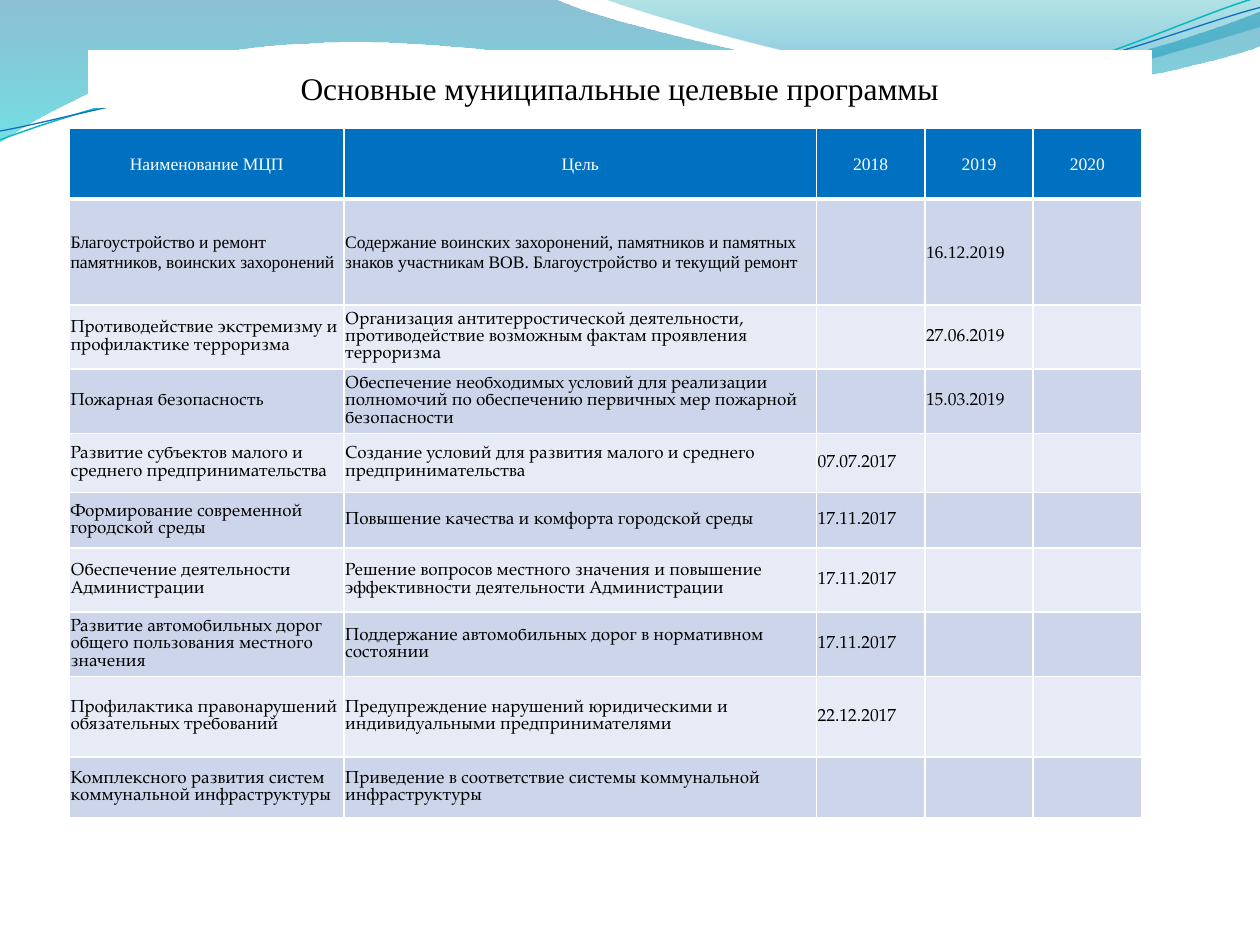
import math

import pptx
import pptx.dml.color
import pptx.enum.shapes
import pptx.enum.text
import pptx.oxml.ns
import pptx.util
from lxml import etree

Inches, Pt = pptx.util.Inches, pptx.util.Pt
RGBColor = pptx.dml.color.RGBColor
qn = pptx.oxml.ns.qn
ALIGN = pptx.enum.text.PP_ALIGN
MIDDLE = pptx.enum.text.MSO_ANCHOR.MIDDLE

WHITE = RGBColor(0xFF, 0xFF, 0xFF)
BLACK = RGBColor(0, 0, 0)
HEAD = RGBColor(0x00, 0x70, 0xC0)
BANDS = RGBColor(0xCC, 0xD5, 0xEA), RGBColor(0xE7, 0xEB, 0xF5)
DEEP = RGBColor(0x00, 0x74, 0xA1)
AQUA = RGBColor(0x00, 0xC6, 0xCF)
TEAL = RGBColor(0x00, 0xA1, 0xA9)
SKY = RGBColor(0x00, 0x8B, 0xBF)
CYAN = RGBColor(0x0A, 0xB8, 0xBF)
BLUE = RGBColor(0x0F, 0x6F, 0xC6)
SERIF, BOOK = "Times New Roman", "TeX Gyre Pagella"
TILT = -2.7

# A part of two numbers ends a line; six numbers make a cubic curve.
LEFT_WAVE = [
    (0, 0), (4.4, -0.01), (4.76, 0.17, 6.64, 0.63, 7.58, 0.63),
    (8.53, 0.63, 9.58, 0.26, 10, 0.09), (10.01, 0.36),
    (9.83, 0.44, 8.7, 0.76, 7.46, 0.75), (6.22, 0.75, 3.82, 0.28, 2.57, 0.34),
    (1.29, 0.36, 0.46, 0.83, -0.01, 1.13), (0, 0),
]
RIGHT_WAVE = [
    (4.79, -0.01), (5.09, 0.11, 6.82, 0.62, 7.69, 0.65),
    (8.56, 0.69, 9.61, 0.32, 10, 0.21), (10, 0), (4.79, -0.01),
]
CYAN_LINE = [
    (0, 1.11), (0.48, 0.93, 1.58, 0.57, 2.77, 0.52),
    (3.95, 0.47, 5.93, 0.89, 7.13, 0.8), (8.33, 0.71, 9.38, 0.15, 9.98, -0.02),
]
BLUE_LINE = [
    (0, 1.04), (0.47, 0.96, 1.64, 0.61, 2.83, 0.56),
    (4.03, 0.51, 5.97, 0.84, 7.17, 0.75), (8.36, 0.67, 9.41, 0.21, 10, 0.06),
]

COLS = [2.18, 3.75, 0.86, 0.86, 0.86]
ROWS = [0.56, 0.84, 0.51, 0.51, 0.47, 0.44, 0.51, 0.51, 0.64, 0.48]
TEXTS = [
    ("Наименование МЦП", "Цель", "2018", "2019", "2020"),
    ("Благоустройство и ремонт памятников, воинских захоронений",
     "Содержание воинских захоронений, памятников и памятных знаков "
     "участникам ВОВ. Благоустройство и текущий ремонт", "", "16.12.2019", ""),
    ("Противодействие экстремизму и профилактике терроризма",
     "Организация антитерростической деятельности, противодействие "
     "возможным фактам проявления терроризма", "", "27.06.2019", ""),
    ("Пожарная безопасность",
     "Обеспечение необходимых условий для реализации полномочий по "
     "обеспечению первичных мер пожарной безопасности", "", "15.03.2019", ""),
    ("Развитие субъектов малого и среднего предпринимательства",
     "Создание условий для развития малого и среднего предпринимательства",
     "07.07.2017", "", ""),
    ("Формирование современной городской среды",
     "Повышение качества и комфорта городской среды", "17.11.2017", "", ""),
    ("Обеспечение деятельности Администрации",
     "Решение вопросов местного значения и повышение эффективности "
     "деятельности Администрации", "17.11.2017", "", ""),
    ("Развитие автомобильных дорог общего пользования местного значения",
     "Поддержание автомобильных дорог в нормативном состоянии",
     "17.11.2017", "", ""),
    ("Профилактика правонарушений обязательных требований",
     "Предупреждение нарушений юридическими и индивидуальными "
     "предпринимателями", "22.12.2017", "", ""),
    ("Комплексного развития систем коммунальной инфраструктуры",
     "Приведение в соответствие системы коммунальной инфраструктуры",
     "", "", ""),
]


def pairs(part):
    return list(zip(part[::2], part[1::2]))


def add_path(slide, parts, close):
    """Build the outline, then join each three curve points into one cubic."""
    pts = [(Inches(x), Inches(y)) for part in parts for x, y in pairs(part)]
    pen = slide.shapes.build_freeform(*pts[0])
    pen.add_line_segments(pts[1:], close=close)
    shape = pen.convert_to_shape()
    shape.shadow.inherit = False
    nodes = iter(list(shape._element.iter(qn("a:lnTo"))))
    for part in parts[1:]:
        group = [next(nodes) for _ in pairs(part)]
        if len(group) == 3:
            curve = etree.Element(qn("a:cubicBezTo"))
            group[0].addprevious(curve)
            for node in group:
                curve.append(node[0])
                node.getparent().remove(node)
    return shape


def add_wave(slide, parts, stops):
    """Fill an outline downward with stops of (place, colour, opacity)."""
    shape = add_path(slide, parts, True)
    shape.line.fill.background()
    shape.fill.gradient()
    shape.fill.gradient_angle = 270
    for stop, (place, color, _) in zip(shape.fill.gradient_stops, stops):
        stop.position = place
        stop.color.rgb = color
    for node, (_, _, alpha) in zip(shape._element.spPr.iter(qn("a:srgbClr")), stops):
        etree.SubElement(node, qn("a:alpha"), val=str(alpha * 1000))


def add_curve(slide, parts, mid, color, width):
    """Level the curve about its middle, then tilt the shape."""
    turn = math.radians(-TILT)
    cos, sin = math.cos(turn), math.sin(turn)

    def level(x, y):
        x, y = x - mid[0], y - mid[1]
        return mid[0] + x * cos - y * sin, mid[1] + x * sin + y * cos

    flat = [sum((level(x, y) for x, y in pairs(part)), ()) for part in parts]
    shape = add_path(slide, flat, False)
    shape.rotation = TILT
    shape.fill.background()
    shape.line.color.rgb = color
    shape.line.width = Pt(width)


def add_waves(slide):
    add_wave(slide, LEFT_WAVE, [(0, DEEP, 45), (1, AQUA, 55)])
    add_wave(slide, RIGHT_WAVE, [(0, TEAL, 30), (0.8, SKY, 45)])
    add_curve(slide, CYAN_LINE, (4.99, 0.57), CYAN, 0.85)
    add_curve(slide, BLUE_LINE, (5, 0.59), BLUE, 0.75)


def add_run(para, text, size, font, color):
    run = para.add_run()
    run.text = text
    run.font.size = Pt(size)
    run.font.name = font
    run.font.color.rgb = color


def add_title(slide, left, top, width, height):
    kind = pptx.enum.shapes.MSO_SHAPE.RECTANGLE
    box = slide.shapes.add_shape(kind, left, top, width, height)
    box.shadow.inherit = False
    box.fill.solid()
    box.fill.fore_color.rgb = WHITE
    box.line.color.rgb = WHITE
    box.line.width = Pt(0.75)
    frame = box.text_frame
    frame.word_wrap = True
    frame.vertical_anchor = pptx.enum.text.MSO_ANCHOR.BOTTOM
    frame.margin_left = frame.margin_right = frame.margin_bottom = 0
    frame.margin_top = Inches(0.05)
    para = frame.paragraphs[0]
    para.alignment = ALIGN.CENTER
    add_run(para, "Основные муниципальные целевые программы", 18, SERIF, BLACK)


def edge_cell(cell, base):
    props = cell._tc.get_or_add_tcPr()
    for side, width in zip("LRTB", (1, 1, 1, base)):
        line = etree.SubElement(props, qn("a:ln" + side), w=str(Pt(width)))
        fill = etree.SubElement(line, qn("a:solidFill"))
        etree.SubElement(fill, qn("a:srgbClr"), val=str(WHITE))


def fill_cell(cell, text, row):
    edge_cell(cell, 1 if row else 3)
    cell.fill.solid()
    cell.fill.fore_color.rgb = BANDS[(row - 1) % 2] if row else HEAD
    cell.vertical_anchor = MIDDLE
    cell.margin_left = cell.margin_right = cell.margin_top = Inches(0.01)
    cell.margin_bottom = 0
    para = cell.text_frame.paragraphs[0]
    if not row:
        para.alignment = ALIGN.CENTER
    if text:
        add_run(para, text, 10, BOOK if row > 1 else SERIF, BLACK if row else WHITE)


def add_grid(slide, left, top, width, height):
    grid = slide.shapes.add_table(len(ROWS), len(COLS), left, top, width, height).table
    for col, size in zip(grid.columns, COLS):
        col.width = Inches(size)
    for r, (size, texts) in enumerate(zip(ROWS, TEXTS)):
        grid.rows[r].height = Inches(size)
        for c, text in enumerate(texts):
            fill_cell(grid.cell(r, c), text, r)


def main():
    deck = pptx.Presentation()
    deck.slide_width, deck.slide_height = Inches(10), Inches(7.5)
    slide = deck.slides.add_slide(deck.slide_layouts[6])
    add_waves(slide)
    add_title(slide, Inches(0.7), Inches(0.4), Inches(8.44), Inches(0.45))
    add_grid(slide, Inches(0.55), Inches(1.02), Inches(sum(COLS)), Inches(sum(ROWS)))
    deck.save("out.pptx")


if __name__ == "__main__":
    main()
